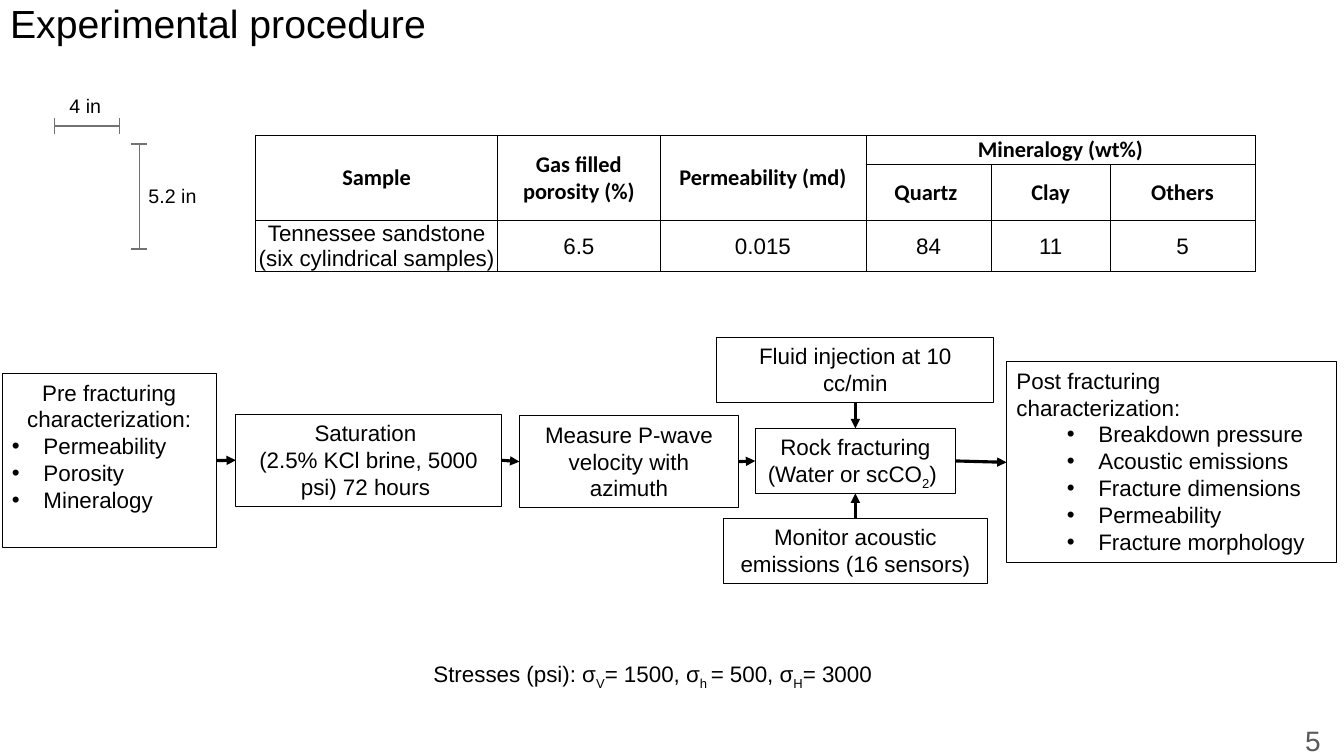
from dataclasses import dataclass
from itertools import product

from lxml.etree import SubElement
from pptx import Presentation
from pptx.dml.color import RGBColor
from pptx.enum.shapes import MSO_CONNECTOR, MSO_SHAPE
from pptx.enum.text import MSO_ANCHOR, PP_ALIGN
from pptx.oxml import parse_xml
from pptx.oxml.ns import nsdecls, qn
from pptx.util import Pt

BLACK = "000000"
GREY = "767171"
TOP, LEFT, BOTTOM, RIGHT = range(4)


@dataclass
class Line:
    text: str
    align: PP_ALIGN = PP_ALIGN.CENTER
    indent: float = 0


@dataclass
class Step:
    name: str
    left: float
    top: float
    width: float
    height: float
    lines: list[Line]


@dataclass
class Arrow:
    start: str
    start_side: int
    end: str
    end_side: int


@dataclass
class Label:
    text: str
    left: float
    top: float
    width: float
    height: float
    size: float
    color: str = BLACK
    align: PP_ALIGN = PP_ALIGN.LEFT


@dataclass
class Cell:
    row: int
    column: int
    text: str
    rows: int = 1
    columns: int = 1


def bullets(align: PP_ALIGN, indent: float, *texts: str) -> list[Line]:
    return [Line(text, align, indent) for text in texts]


STEPS = [
    Step("pre", 1.5, 267, 153, 124, [
        Line("Pre fracturing characterization:"),
        *bullets(PP_ALIGN.JUSTIFY, 22.5, "Permeability", "Porosity", "Mineralogy")]),
    Step("saturation", 168.5, 296, 189.5, 65.5, [
        Line("Saturation "), Line("(2.5% KCl brine, 5000 psi) 72 hours ")]),
    Step("velocity", 371, 297, 156.5, 65.5, [Line("Measure P-wave velocity with azimuth")]),
    Step("injection", 512, 241, 198, 46.5, [Line("Fluid injection at 10 cc/min")]),
    Step("fracturing", 539.5, 306, 143, 46.5, [
        Line("Rock fracturing"), Line("(Water or scCO|2|) ")]),
    Step("acoustic", 516.5, 370.5, 189, 46.5, [Line("Monitor acoustic emissions (16 sensors)")]),
    Step("post", 719, 258.5, 235.5, 143.5, [
        Line("Post fracturing characterization:", PP_ALIGN.LEFT),
        *bullets(PP_ALIGN.LEFT, 58.5, "Breakdown pressure", "Acoustic emissions",
                 "Fracture dimensions", "Permeability", "Fracture morphology")]),
]
ARROWS = [
    Arrow("pre", RIGHT, "saturation", LEFT),
    Arrow("saturation", RIGHT, "velocity", LEFT),
    Arrow("velocity", RIGHT, "fracturing", LEFT),
    Arrow("fracturing", RIGHT, "post", LEFT),
    Arrow("injection", BOTTOM, "fracturing", TOP),
    Arrow("acoustic", TOP, "fracturing", BOTTOM),
]
LABELS = [
    Label("4 in", 42.5, 63.5, 40, 24.5, 14),
    Label("5.2 in", 99, 127.5, 53, 24.5, 14),
    Label("Stresses (psi): σ|V|= 1500, σ|h |= 500, σ|H|= 3000", 302.5, 468, 355, 26.5, 16),
    Label("5", 911, 513, 39.5, 25, 20, "595959", PP_ALIGN.RIGHT),
]
GAUGES = [
    (39, 90, 85.5, 90), (39, 84.5, 39, 95.5), (85.5, 84.5, 85.5, 95.5),
    (99.5, 103, 99.5, 178), (93.5, 103, 105, 103), (93.5, 178, 105, 178),
]
COLUMN_WIDTHS = [173, 116, 147, 89.5, 85, 103.5]
ROW_HEIGHTS = [21, 39, 36.5]
HEADER = [
    Cell(0, 0, "Sample", rows=2),
    Cell(0, 1, "Gas filled porosity (%)", rows=2),
    Cell(0, 2, "Permeability (md)", rows=2),
    Cell(0, 3, "Mineralogy (wt%)", columns=3),
    Cell(1, 3, "Quartz "), Cell(1, 4, "Clay"), Cell(1, 5, "Others"),
]
VALUES = ["Tennessee sandstone (six cylindrical samples)", "6.5", "0.015", "84", "11", "5"]


def rgb(color: str) -> RGBColor:
    return RGBColor.from_string(color)


def write(para, text: str, *, size: float = 16, font: str = "Arial", color: str = BLACK,
          bold: bool = False, align: PP_ALIGN = PP_ALIGN.LEFT, indent: float = 0) -> None:
    para.alignment = align
    if indent:
        properties = para._p.get_or_add_pPr()
        properties.set("marL", str(Pt(indent)))
        properties.set("indent", str(Pt(-22.5)))
        SubElement(properties, qn("a:buFont")).set("typeface", "Arial")
        SubElement(properties, qn("a:buChar")).set("char", "•")
    for index, piece in enumerate(text.split("|")):
        span = para.add_run()
        span.text = piece
        span.font.size = Pt(size)
        span.font.name = font
        span.font.bold = bold
        span.font.color.rgb = rgb(color)
        if index % 2:
            span.font._element.set("baseline", "-25000")


def add_line(page, ends: tuple, color: str, width: float):
    line = page.shapes.add_connector(MSO_CONNECTOR.STRAIGHT, *map(Pt, ends))
    line.line.color.rgb = rgb(color)
    line.line.width = Pt(width)
    SubElement(line._element.spPr, qn("a:effectLst"))
    return line


def add_step(page, step: Step):
    box = page.shapes.add_shape(MSO_SHAPE.RECTANGLE, Pt(step.left), Pt(step.top),
                                Pt(step.width), Pt(step.height))
    box.shadow.inherit = False
    box.fill.background()
    box.line.color.rgb = rgb(BLACK)
    box.line.width = Pt(0.75)
    frame = box.text_frame
    frame.word_wrap = True
    frame.vertical_anchor = MSO_ANCHOR.TOP
    for index, line in enumerate(step.lines):
        para = frame.add_paragraph() if index else frame.paragraphs[0]
        write(para, line.text, align=line.align, indent=line.indent)
    return box


def add_arrow(page, arrow: Arrow, boxes: dict) -> None:
    line = add_line(page, (0, 0, 0, 0), BLACK, 2.25)
    line.begin_connect(boxes[arrow.start], arrow.start_side)
    line.end_connect(boxes[arrow.end], arrow.end_side)
    SubElement(line.line._get_or_add_ln(), qn("a:tailEnd")).set("type", "triangle")


def add_label(page, label: Label) -> None:
    box = page.shapes.add_textbox(Pt(label.left), Pt(label.top), Pt(label.width), Pt(label.height))
    box.text_frame.word_wrap = True
    write(box.text_frame.paragraphs[0], label.text, size=label.size, color=label.color,
          align=label.align)


def add_sample_table(page) -> None:
    table = page.shapes.add_table(len(ROW_HEIGHTS), len(COLUMN_WIDTHS), Pt(182.5), Pt(96.5),
                                  Pt(sum(COLUMN_WIDTHS)), Pt(sum(ROW_HEIGHTS))).table
    table.first_row = table.horz_banding = False
    for column, width in zip(table.columns, COLUMN_WIDTHS):
        column.width = Pt(width)
    for row, height in zip(table.rows, ROW_HEIGHTS):
        row.height = Pt(height)
    for row, column in product(range(len(ROW_HEIGHTS)), range(len(COLUMN_WIDTHS))):
        cell = table.cell(row, column)
        cell.fill.background()
        cell.vertical_anchor = MSO_ANCHOR.MIDDLE
        cell.margin_left = cell.margin_right = cell.margin_top = Pt(0.75)
        cell.margin_bottom = 0
        for index, side in enumerate("LRTB"):
            cell._tc.get_or_add_tcPr().insert(index, parse_xml(
                f'<a:ln{side} {nsdecls("a")} w="{Pt(0.5)}"><a:solidFill>'
                f'<a:srgbClr val="{BLACK}"/></a:solidFill></a:ln{side}>'))
    values = [Cell(2, column, text) for column, text in enumerate(VALUES)]
    for item in HEADER + values:
        cell = table.cell(item.row, item.column)
        if item.rows * item.columns > 1:
            cell.merge(table.cell(item.row + item.rows - 1, item.column + item.columns - 1))
        header = item.row < 2
        write(cell.text_frame.paragraphs[0], item.text, font="Calibri" if header else "Arial",
              bold=header, align=PP_ALIGN.CENTER)


def main() -> None:
    deck = Presentation()
    deck.slide_width, deck.slide_height = Pt(960), Pt(540)
    page = deck.slides.add_slide(deck.slide_layouts[5])
    title = page.shapes.title
    title.left, title.top, title.width, title.height = Pt(0), Pt(0), Pt(313), Pt(46)
    title.text_frame.vertical_anchor = MSO_ANCHOR.TOP
    title.text_frame.paragraphs[0].line_spacing = 0.9
    write(title.text_frame.paragraphs[0], "Experimental procedure", size=28)
    add_sample_table(page)
    boxes = {step.name: add_step(page, step) for step in STEPS}
    for arrow in ARROWS:
        add_arrow(page, arrow, boxes)
    for ends in GAUGES:
        add_line(page, ends, GREY, 1)
    for label in LABELS:
        add_label(page, label)
    deck.save("out.pptx")


if __name__ == "__main__":
    main()
